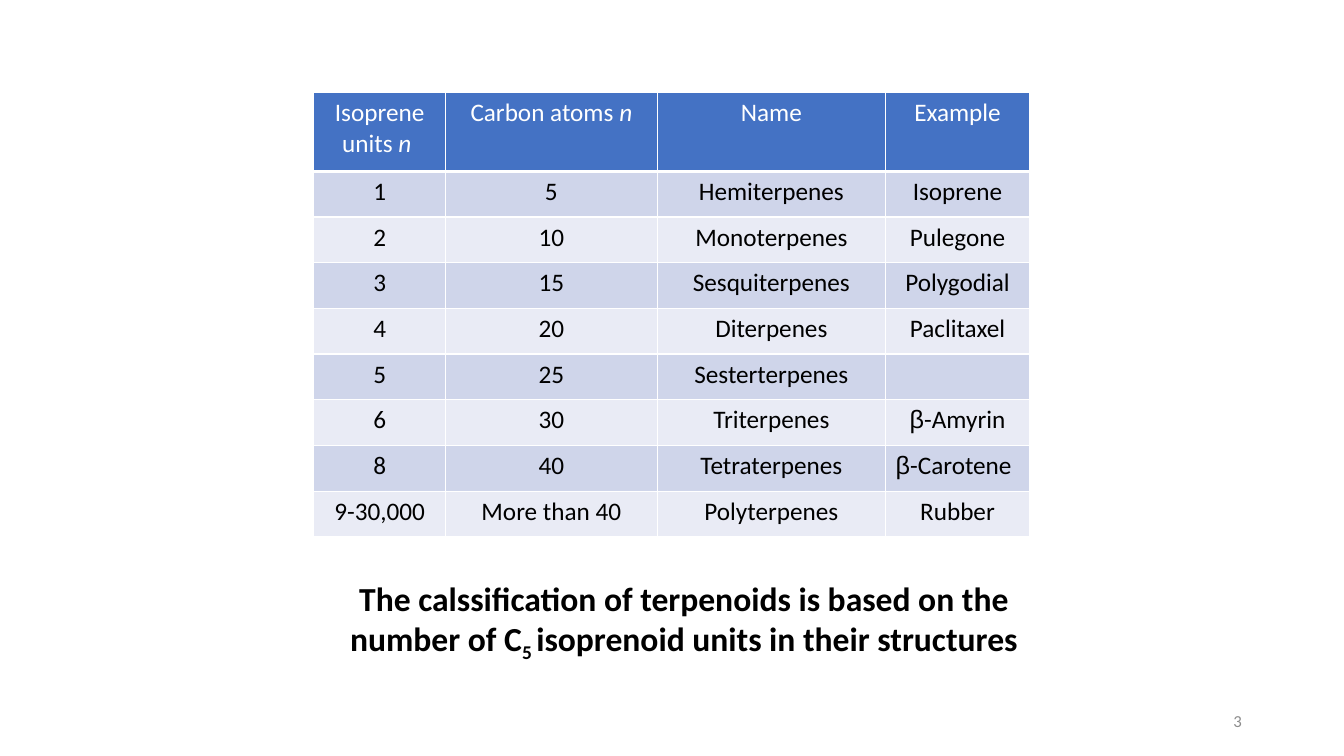
import dataclasses
import lxml.etree
import pptx
import pptx.dml.color
import pptx.enum.text
import pptx.oxml.ns
import pptx.util

EMU_PER_PX = 6096
CENTER = pptx.enum.text.PP_ALIGN.CENTER
LEFT = pptx.enum.text.PP_ALIGN.LEFT
RIGHT = pptx.enum.text.PP_ALIGN.RIGHT
TOP = pptx.enum.text.MSO_ANCHOR.TOP
MIDDLE = pptx.enum.text.MSO_ANCHOR.MIDDLE

COLUMN_WIDTHS = (196, 315, 340, 214)
HEADER_HEIGHT = 117
ROW_HEIGHT = 68
HEADER_FILL = "4472C4"
BAND_FILLS = ("E9EBF5", "CFD5EA")


@dataclasses.dataclass(frozen=True)
class Piece:
    text: str
    italic: bool = False
    baseline: int = 0
    font: str = ""


@dataclasses.dataclass(frozen=True)
class Style:
    size: int
    color: str
    bold: bool = False
    align: pptx.enum.text.PP_ALIGN = CENTER


@dataclasses.dataclass(frozen=True)
class Label:
    left: int
    top: int
    width: int
    height: int
    pieces: tuple[Piece, ...]
    style: Style
    anchor: pptx.enum.text.MSO_ANCHOR = TOP


HEADER_STYLE = Style(18, "FFFFFF")
BODY_STYLE = Style(18, "000000")
BETA = Piece("β", font="Arial")

HEADER = (
    (Piece("Isoprene units "), Piece("n ", italic=True)),
    (Piece("Carbon atoms "), Piece("n", italic=True)),
    "Name",
    "Example",
)
TERPENES = (
    ("1", "5", "Hemiterpenes", "Isoprene"),
    ("2", "10", "Monoterpenes", "Pulegone"),
    ("3", "15", "Sesquiterpenes", "Polygodial"),
    ("4", "20", "Diterpenes", "Paclitaxel"),
    ("5", "25", "Sesterterpenes", ""),
    ("6", "30", "Triterpenes", (BETA, Piece("-Amyrin", font="Calibri"))),
    ("8", "40", "Tetraterpenes", (BETA, Piece("-Carotene", font="Calibri"))),
    ("9-30,000", "More than 40", "Polyterpenes", "Rubber"),
)
LEFT_ALIGNED_CELL = (7, 3)

LABELS = (
    Label(1413, 1042, 450, 60, (Piece("3"),), Style(12, "8C8C8C", align=RIGHT), MIDDLE),
    Label(
        445, 852, 1146, 136,
        (
            Piece("The calssification of terpenoids is based on the number of C"),
            Piece("5 ", baseline=-25000),
            Piece("isoprenoid units in their structures"),
        ),
        Style(24, "000000", bold=True),
    ),
)


def px(length: int) -> pptx.util.Emu:
    return pptx.util.Emu(length * EMU_PER_PX)


def rgb(color: str) -> pptx.dml.color.RGBColor:
    return pptx.dml.color.RGBColor.from_string(color)


def write(frame, pieces: tuple[Piece, ...], style: Style) -> None:
    para = frame.paragraphs[0]
    para.alignment = style.align
    para.font.size = pptx.util.Pt(style.size)
    para.font.bold = style.bold
    para.font.color.rgb = rgb(style.color)
    if not any(piece.font for piece in pieces):
        para.font.name = "Calibri"
    for piece in pieces:
        span = para.add_run()
        span.text = piece.text
        if piece.italic:
            span.font.italic = True
        if piece.font:
            span.font.name = piece.font
        if piece.baseline:
            span.font._element.set("baseline", str(piece.baseline))


def add_label(page, label: Label) -> None:
    box = page.shapes.add_textbox(
        px(label.left), px(label.top), px(label.width), px(label.height)
    )
    box.text_frame.word_wrap = True
    box.text_frame.vertical_anchor = label.anchor
    write(box.text_frame, label.pieces, label.style)


def set_borders(cell, top: int, bottom: int) -> None:
    properties = cell._tc.get_or_add_tcPr()
    sides = {"a:lnL": 1, "a:lnR": 1, "a:lnT": top, "a:lnB": bottom}
    for position, (side, points) in enumerate(sides.items()):
        line = lxml.etree.Element(pptx.oxml.ns.qn(side), w=str(pptx.util.Pt(points)))
        fill = lxml.etree.SubElement(line, pptx.oxml.ns.qn("a:solidFill"))
        lxml.etree.SubElement(fill, pptx.oxml.ns.qn("a:srgbClr"), val="FFFFFF")
        properties.insert(position, line)


def add_terpene_table(page) -> None:
    rows = (HEADER, *TERPENES)
    height = HEADER_HEIGHT + ROW_HEIGHT * len(TERPENES)
    table = page.shapes.add_table(
        len(rows), len(COLUMN_WIDTHS),
        px(467), px(138), px(sum(COLUMN_WIDTHS)), px(height),
    ).table
    for column, width in zip(table.columns, COLUMN_WIDTHS):
        column.width = px(width)
    for index, values in enumerate(rows):
        is_header = index == 0
        table.rows[index].height = px(HEADER_HEIGHT if is_header else ROW_HEIGHT)
        for column, value in enumerate(values):
            cell = table.cell(index, column)
            cell.fill.solid()
            cell.fill.fore_color.rgb = rgb(HEADER_FILL if is_header else BAND_FILLS[index % 2])
            set_borders(cell, 3 if index == 1 else 1, 3 if is_header else 1)
            style = HEADER_STYLE if is_header else BODY_STYLE
            if (index, column) == LEFT_ALIGNED_CELL:
                style = dataclasses.replace(style, align=LEFT)
            pieces = (Piece(value),) if isinstance(value, str) else value
            write(cell.text_frame, pieces if value else (), style)


def main() -> None:
    deck = pptx.Presentation()
    deck.slide_width, deck.slide_height = px(2000), px(1125)
    page = deck.slides.add_slide(deck.slide_layouts[6])
    for label in LABELS:
        add_label(page, label)
    add_terpene_table(page)
    deck.save("out.pptx")


if __name__ == "__main__":
    main()
